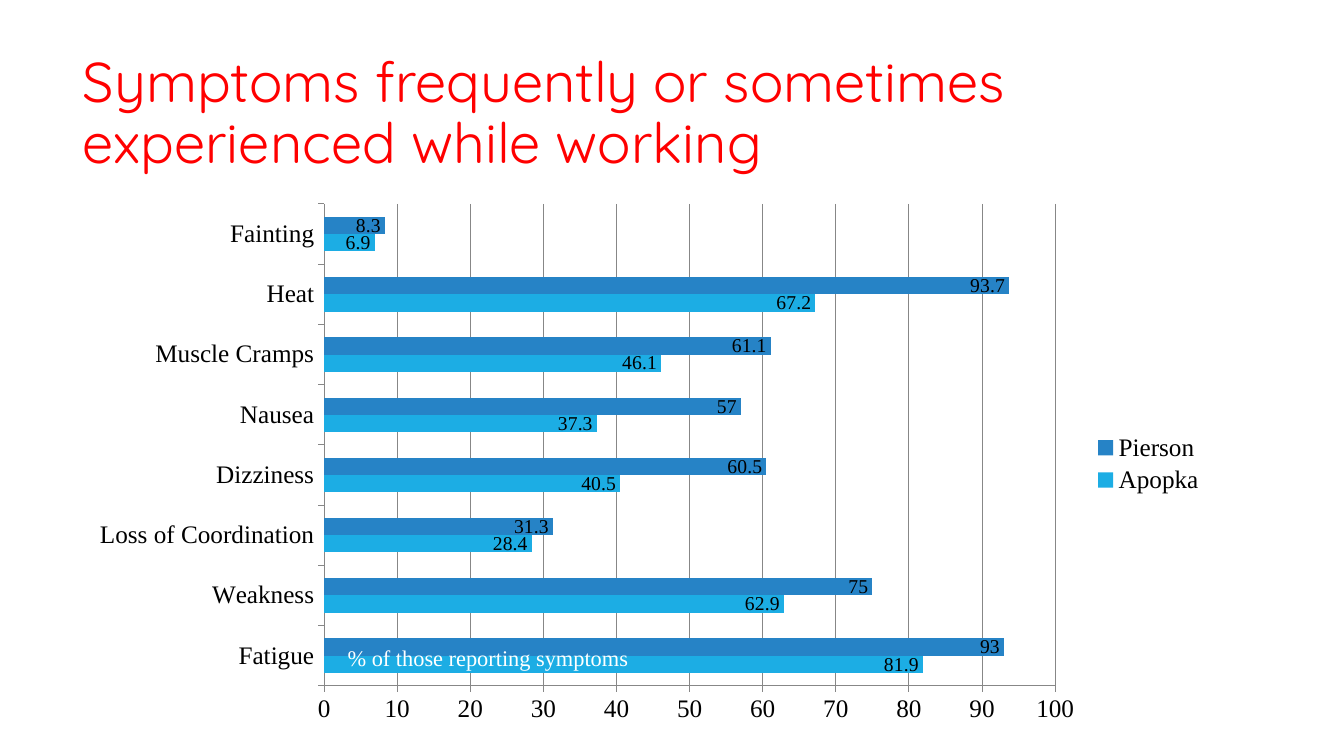
from lxml.etree import SubElement
from pptx import Presentation
from pptx.chart.data import CategoryChartData
from pptx.dml.color import RGBColor
from pptx.enum.chart import XL_CHART_TYPE, XL_LABEL_POSITION, XL_LEGEND_POSITION, XL_TICK_MARK
from pptx.enum.text import MSO_ANCHOR, MSO_AUTO_SIZE, PP_ALIGN
from pptx.oxml.ns import qn
from pptx.util import Inches, Pt

BAR_CLUSTERED = XL_CHART_TYPE.BAR_CLUSTERED
INSIDE_END = XL_LABEL_POSITION.INSIDE_END
LEGEND_RIGHT = XL_LEGEND_POSITION.RIGHT
TICK_OUTSIDE = XL_TICK_MARK.OUTSIDE
MIDDLE = MSO_ANCHOR.MIDDLE
NO_FIT = MSO_AUTO_SIZE.NONE
GROW = MSO_AUTO_SIZE.SHAPE_TO_FIT_TEXT
LEFT = PP_ALIGN.LEFT

COLUMNS, ROWS = 240, 135
TITLE_ONLY = 5
SERIF = "Times New Roman"
GRID_GREY = "878787"
SYMPTOMS = ["Fatigue", "Weakness", "Loss of Coordination", "Dizziness",
            "Nausea", "Muscle Cramps", "Heat", "Fainting"]
TOWNS = [
    ("Apopka", "1CADE4", [81.9, 62.9, 28.4, 40.5, 37.3, 46.1, 67.2, 6.9]),
    ("Pierson", "2683C6", [93, 75, 31.3, 60.5, 57, 61.1, 93.7, 8.3]),
]
PLOT_SHARES = {"x": 0.22, "y": 0.02, "w": 0.64, "h": 0.89}


def color(value):
    """Turn a hex string into a colour."""
    return RGBColor.from_string(value)


def apply(target, values):
    """Set each attribute of the target from a dict."""
    for name, value in values.items():
        setattr(target, name, value)


class SlideBuilder:
    """Holds the grid, the style and the current slide."""

    def __init__(self, deck):
        self.column = deck.slide_width / COLUMNS
        self.row = deck.slide_height / ROWS
        self.page = deck.slides.add_slide(deck.slide_layouts[TITLE_ONLY])

    def place(self, left, top, width, height):
        """Turn grid columns and rows into lengths."""
        return (round(left * self.column), round(top * self.row),
                round(width * self.column), round(height * self.row))

    def style_font(self, font, size, hex_color, name=SERIF):
        """Give a font its size, colour and face."""
        apply(font, {"size": Pt(size), "name": name, "bold": False})
        font.color.rgb = color(hex_color)

    def fill_text(self, box, text, frame_values, size, hex_color, name=SERIF):
        """Put one formatted paragraph in a box."""
        frame = box.text_frame
        apply(frame, {"word_wrap": True, **frame_values})
        para = frame.paragraphs[0]
        para.alignment = LEFT
        span = para.add_run()
        span.text = text
        self.style_font(span.font, size, hex_color, name)
        return para

    def title(self, text, area):
        """Fill and move the title placeholder."""
        box = self.page.shapes.title
        lengths = dict(zip(("left", "top", "width", "height"), self.place(*area)))
        apply(box, lengths)
        fit = {"vertical_anchor": MIDDLE, "auto_size": NO_FIT}
        para = self.fill_text(box, text, fit, 40, "FF0000", "Quicksand")
        para.line_spacing = 0.9

    def caption(self, text, area):
        """Add a text box that grows with its text."""
        box = self.page.shapes.add_textbox(*self.place(*area))
        self.fill_text(box, text, {"auto_size": GROW}, 16, "FFFFFF")

    def bar_chart(self, categories, groups, area):
        """Add a clustered bar chart with labels and a legend."""
        data = CategoryChartData()
        data.categories = categories
        for name, _, values in groups:
            data.add_series(name, values)
        frame = self.page.shapes.add_chart(BAR_CLUSTERED, *self.place(*area), data)
        chart = frame.chart
        apply(chart, {"has_title": False, "has_legend": True})
        apply(chart.legend, {"position": LEGEND_RIGHT, "include_in_layout": False})
        self.style_font(chart.font, 18, "000000")
        plot = chart.plots[0]
        apply(plot, {"gap_width": 150, "overlap": 0, "vary_by_categories": False})
        for series, (_, hex_color, _) in zip(plot.series, groups):
            series.format.fill.solid()
            series.format.fill.fore_color.rgb = color(hex_color)
            labels = series.data_labels
            apply(labels, {"show_value": True, "position": INSIDE_END})
            self.style_font(labels.font, 14, "000000")
        self.axes(chart)
        self.fix_plot(chart)

    def axes(self, chart):
        """Format both axes and the gridlines."""
        value_axis = chart.value_axis
        apply(value_axis, {"minimum_scale": 0, "maximum_scale": 100,
                           "major_unit": 10, "has_major_gridlines": True})
        lines = [value_axis.major_gridlines.format.line]
        for axis in (value_axis, chart.category_axis):
            axis.major_tick_mark = TICK_OUTSIDE
            lines.append(axis.format.line)
        for line in lines:
            line.width = Pt(0.75)
            line.color.rgb = color(GRID_GREY)

    def fix_plot(self, chart):
        """Fix the inner plot area as shares of the chart."""
        area = chart.element.find(".//" + qn("c:plotArea"))
        for old in area.findall(qn("c:layout")):
            area.remove(old)
        layout = SubElement(area, qn("c:layout"))
        area.insert(0, layout)
        manual = SubElement(layout, qn("c:manualLayout"))
        settings = {"layoutTarget": "inner", "xMode": "edge", "yMode": "edge", **PLOT_SHARES}
        for name, value in settings.items():
            SubElement(manual, qn("c:" + name)).set("val", str(value))


def main():
    """Build and save the deck."""
    deck = Presentation()
    apply(deck, {"slide_width": Inches(13.33), "slide_height": Inches(7.5)})
    builder = SlideBuilder(deck)
    builder.title("Symptoms frequently or sometimes experienced while working",
                  (13, 6.5, 180, 28))
    builder.bar_chart(SYMPTOMS, TOWNS, (13, 34.5, 204, 96.7))
    builder.caption("% of those reporting symptoms", (60.3, 114.1, 72, 6.7))
    deck.save("out.pptx")


if __name__ == "__main__":
    main()
